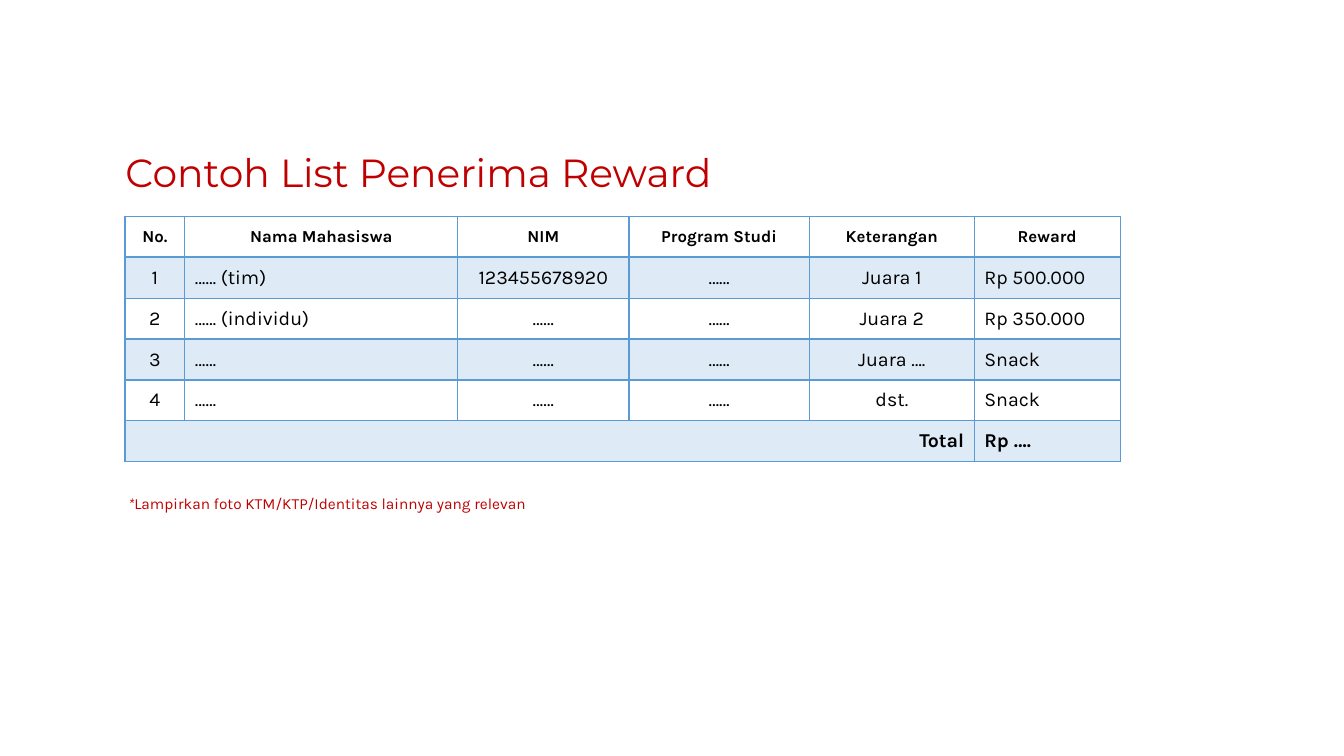
from dataclasses import dataclass

from lxml.etree import SubElement
from pptx import Presentation
from pptx.dml.color import RGBColor
from pptx.enum.text import MSO_ANCHOR, PP_ALIGN
from pptx.oxml.ns import qn
from pptx.util import Pt

TITLE = "Contoh List Penerima Reward"
NOTE = [("*", True), ("Lampirkan foto KTM/KTP/Identitas lainnya yang relevan", False)]
HEADER = ["No.", "Nama Mahasiswa", "NIM", "Program Studi", "Keterangan", "Reward"]
WINNERS = [
    ["1", "…… (tim)", "123455678920", "……", "Juara 1", "Rp 500.000"],
    ["2", "…… (individu)", "……", "……", "Juara 2", "Rp 350.000"],
    ["3", "……", "……", "……", "Juara ….", "Snack"],
    ["4", "……", "……", "……", "dst.", "Snack"],
]
TOTAL = ["Total", "", "", "", "", "Rp …."]

# Lengths in px, 96 to the inch
PX = 9525
SLIDE = (1280, 720)
TITLE_BOX = (110, 112, 638, 109)
NOTE_BOX = (101, 466, 452, 28)
NOTE_INDENT = 12
TABLE_AT = (119, 206)
COLUMN_WIDTHS = [57, 260, 163, 172, 157, 139]
ROW_HEIGHT = 39
LEFT, CENTER, RIGHT = PP_ALIGN.LEFT, PP_ALIGN.CENTER, PP_ALIGN.RIGHT
COLUMN_ALIGN = [CENTER, LEFT, CENTER, CENTER, CENTER, LEFT]


@dataclass(frozen=True)
class Theme:
    red: str = "C00000"
    ink: str = "000000"
    blue: str = "5B9BD5"
    band_opacity: int = 20
    title_font: str = "Montserrat"
    body_font: str = "Karla"
    title_size: int = 28
    header_size: int = 12
    body_size: int = 14
    note_size: int = 11
    rule: int = 1
    header_rule: int = 2


THEME = Theme()


def scaled(lengths):
    return [length * PX for length in lengths]


def add_span(para, text, font, size, color, bold=False, italic=False):
    span = para.add_run()
    span.text = text
    span.font.name = font
    span.font.size = Pt(size)
    span.font.color.rgb = RGBColor.from_string(color)
    span.font.bold = bold
    span.font.italic = italic


def add_box(page, place):
    box = page.shapes.add_textbox(*scaled(place))
    box.text_frame.word_wrap = True
    return box.text_frame


def set_borders(cell, top, bottom):
    properties = cell._tc.get_or_add_tcPr()
    widths = {"a:lnL": THEME.rule, "a:lnR": THEME.rule, "a:lnT": top, "a:lnB": bottom}
    for side, width in widths.items():
        line = SubElement(properties, qn(side), w=str(Pt(width)))
        fill = SubElement(line, qn("a:solidFill"))
        SubElement(fill, qn("a:srgbClr"), val=THEME.blue)


def set_band(cell, banded):
    if not banded:
        cell.fill.background()
        return
    cell.fill.solid()
    cell.fill.fore_color.rgb = RGBColor.from_string(THEME.blue)
    color = cell._tc.tcPr.find(qn("a:solidFill")).find(qn("a:srgbClr"))
    SubElement(color, qn("a:alpha"), val=str(THEME.band_opacity * 1000))


def add_title(page):
    frame = add_box(page, TITLE_BOX)
    frame.vertical_anchor = MSO_ANCHOR.MIDDLE
    para = frame.paragraphs[0]
    para.line_spacing = 0.9
    add_span(para, TITLE, THEME.title_font, THEME.title_size, THEME.red)


def add_reward_table(page):
    rows = [HEADER, *WINNERS, TOTAL]
    last = len(rows) - 1
    size = (sum(COLUMN_WIDTHS), ROW_HEIGHT * len(rows))
    table = page.shapes.add_table(
        len(rows), len(HEADER), *scaled(TABLE_AT + size)).table
    table.first_row = table.horz_banding = False
    for column, width in zip(table.columns, scaled(COLUMN_WIDTHS)):
        column.width = width
    for row in table.rows:
        row.height = ROW_HEIGHT * PX
    table.cell(last, 0).merge(table.cell(last, len(HEADER) - 2))

    for r, texts in enumerate(rows):
        for c, text in enumerate(texts):
            cell = table.cell(r, c)
            cell.vertical_anchor = MSO_ANCHOR.MIDDLE
            set_borders(cell,
                        top=THEME.header_rule if r == 1 else THEME.rule,
                        bottom=THEME.header_rule if r == 0 else THEME.rule)
            set_band(cell, banded=r % 2 == 1)
            if cell.is_spanned:
                continue
            para = cell.text_frame.paragraphs[0]
            para.alignment = (CENTER if r == 0 else
                              RIGHT if cell.is_merge_origin else COLUMN_ALIGN[c])
            add_span(para, text, THEME.body_font,
                     THEME.header_size if r == 0 else THEME.body_size,
                     THEME.ink, bold=r in (0, last))


def add_note(page):
    para = add_box(page, NOTE_BOX).paragraphs[0]
    para._p.get_or_add_pPr().set("marL", str(NOTE_INDENT * PX))
    for text, italic in NOTE:
        add_span(para, text, THEME.body_font, THEME.note_size, THEME.red, italic=italic)


def main():
    deck = Presentation()
    deck.slide_width, deck.slide_height = scaled(SLIDE)
    page = deck.slides.add_slide(deck.slide_layouts[6])
    add_title(page)
    add_reward_table(page)
    add_note(page)
    deck.save("out.pptx")


if __name__ == "__main__":
    main()
